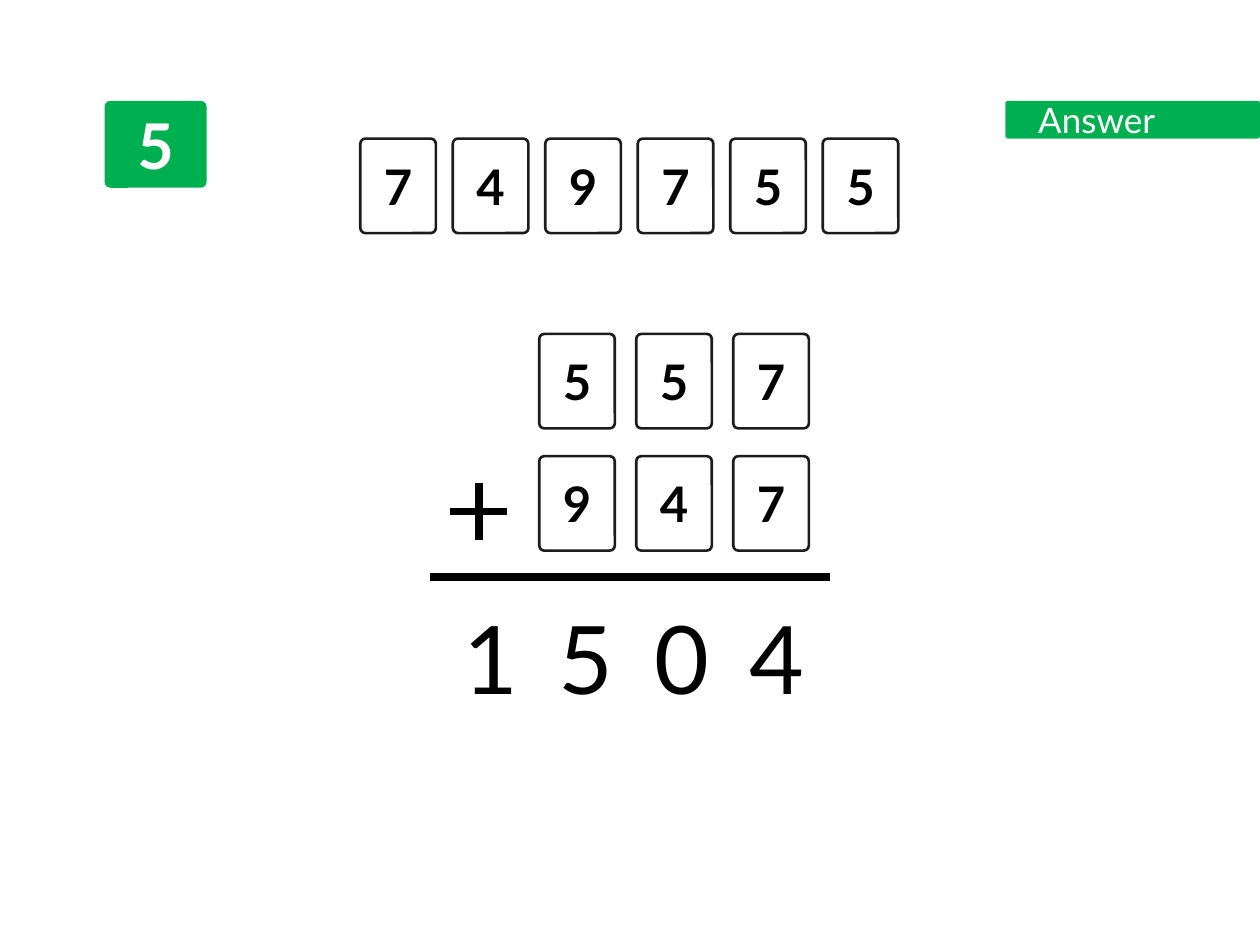
from lxml import etree
from pptx import Presentation
from pptx.dml.color import RGBColor
from pptx.enum.shapes import MSO_CONNECTOR, MSO_SHAPE
from pptx.enum.text import MSO_ANCHOR, PP_ALIGN
from pptx.oxml.ns import qn
from pptx.util import Inches, Pt

ROUNDED = MSO_SHAPE.ROUNDED_RECTANGLE
STRAIGHT = MSO_CONNECTOR.STRAIGHT
MIDDLE, TOP = MSO_ANCHOR.MIDDLE, MSO_ANCHOR.TOP
CENTER = PP_ALIGN.CENTER

# Content
QUESTION = "5"
LABEL = "Answer"
# digits, left of first card, top, step between cards
CARD_ROWS = [
    ("749755", 2.86, 1.1, 0.734),
    ("557", 4.28, 2.65, 0.77),
    ("947", 4.28, 3.62, 0.77),
]
TOTAL = ("1504", 3.58, 4.71, 0.757)
CARD_SIZE = (0.6, 0.75)
DIGIT_SIZE = (0.55, 1.01)
PLUS_CENTER, PLUS_ARM = (3.8, 4.06), 0.225
SUM_LINE = (3.41, 4.58, 6.59, 4.58)

THEME = {
    "green": RGBColor(0x00, 0xB0, 0x50),
    "white": RGBColor(0xFF, 0xFF, 0xFF),
    "black": RGBColor(0x00, 0x00, 0x00),
    "edge": RGBColor(0x1C, 0x1C, 0x1C),
    "font": "Lato",
    "corner": 0.067,
    "edge_width": Pt(1.5),
    "rule_width": Pt(4.5),
    "question": {"size": Pt(36), "bold": True},
    "card": {"size": Pt(28), "bold": True},
    "total": {"size": Pt(54), "bold": False},
    "label": {"size": Pt(20), "bold": False},
}


def write(box, text, style, color, anchor=MIDDLE):
    frame = box.text_frame
    frame.word_wrap = True
    frame.vertical_anchor = anchor
    para = frame.paragraphs[0]
    para.alignment = CENTER
    span = para.add_run()
    span.text = text
    for name, value in {"name": THEME["font"], **THEME[style]}.items():
        setattr(span.font, name, value)
    span.font.color.rgb = THEME[color]
    return span


def add_box(page, place, text, style, fill, color, edge=None):
    box = page.shapes.add_shape(ROUNDED, *map(Inches, place))
    box.adjustments[0] = THEME["corner"]
    box.shadow.inherit = False
    box.fill.solid()
    box.fill.fore_color.rgb = THEME[fill]
    if edge:
        box.line.color.rgb = THEME[edge]
        box.line.width = THEME["edge_width"]
    else:
        box.line.fill.background()
    write(box, text, style, color)
    return box


def add_rule(page, ends):
    rule = page.shapes.add_connector(STRAIGHT, *map(Inches, ends))
    rule.line.color.rgb = THEME["black"]
    rule.line.width = THEME["rule_width"]
    etree.SubElement(rule._element.spPr, qn("a:effectLst"))


def main():
    deck = Presentation()
    deck.slide_width, deck.slide_height = Inches(10), Inches(7.5)
    page = deck.slides.add_slide(deck.slide_layouts[6])

    # Question number and answer label
    add_box(page, (0.83, 0.8, 0.81, 0.69), QUESTION, "question", "green", "white")
    label = add_box(page, (7.98, 0.8, 2.02, 0.3), LABEL, "label", "green", "white")
    label.text_frame.margin_right = Inches(0.67)

    # Number cards: the given set, then the two addends
    for digits, left, top, step in CARD_ROWS:
        for index, digit in enumerate(digits):
            place = (left + index * step, top, *CARD_SIZE)
            add_box(page, place, digit, "card", "white", "black", "edge")

    # Plus sign and sum line
    x, y = PLUS_CENTER
    add_rule(page, (x, y - PLUS_ARM, x, y + PLUS_ARM))
    add_rule(page, (x - PLUS_ARM, y, x + PLUS_ARM, y))
    add_rule(page, SUM_LINE)

    # Total
    digits, left, top, step = TOTAL
    for index, digit in enumerate(digits):
        place = (left + index * step, top, *DIGIT_SIZE)
        box = page.shapes.add_textbox(*map(Inches, place))
        span = write(box, digit, "total", "black", TOP)
        span.font._element.set("spc", "300")

    deck.save("out.pptx")


if __name__ == "__main__":
    main()
